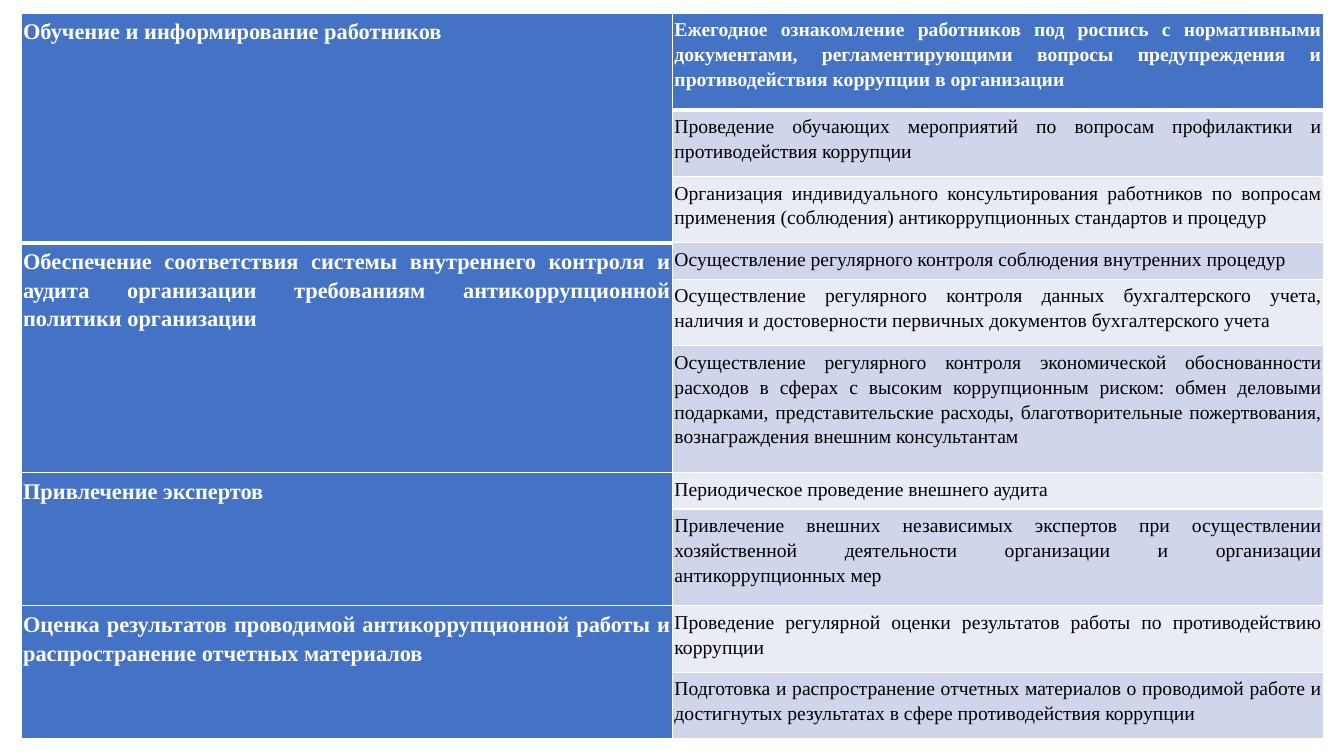
"""Build a slide with a table of anti-corruption measures by area."""
from lxml.etree import SubElement
from pptx import Presentation
from pptx.dml.color import RGBColor
from pptx.enum.text import PP_ALIGN as Align
from pptx.oxml.ns import qn
from pptx.util import Inches, Pt

GROUPS = [
    ("Обучение и информирование работников", [
        ("Ежегодное ознакомление работников под роспись с нормативными документами, "
         "регламентирующими вопросы предупреждения и противодействия коррупции в организации", 0.96),
        ("Проведение обучающих мероприятий по вопросам профилактики и "
         "противодействия коррупции", 0.66),
        ("Организация индивидуального консультирования работников по вопросам "
         "применения (соблюдения) антикоррупционных стандартов и процедур", 0.66),
    ]),
    ("Обеспечение соответствия системы внутреннего контроля и аудита организации "
     "требованиям антикоррупционной политики организации", [
        ("Осуществление регулярного контроля соблюдения внутренних процедур", 0.36),
        ("Осуществление регулярного контроля данных бухгалтерского учета, "
         "наличия и достоверности первичных документов бухгалтерского учета", 0.66),
        ("Осуществление регулярного контроля экономической обоснованности расходов в сферах "
         "с высоким коррупционным риском: обмен деловыми подарками, представительские расходы, "
         "благотворительные пожертвования, вознаграждения внешним консультантам", 1.26),
    ]),
    ("Привлечение экспертов", [
        ("Периодическое проведение внешнего аудита", 0.36),
        ("Привлечение внешних независимых экспертов при осуществлении хозяйственной "
         "деятельности организации и организации антикоррупционных мер", 0.96),
    ]),
    ("Оценка результатов проводимой антикоррупционной работы и "
     "распространение отчетных материалов", [
        ("Проведение регулярной оценки результатов работы по противодействию коррупции", 0.66),
        ("Подготовка и распространение отчетных материалов о проводимой работе и "
         "достигнутых результатах в сфере противодействия коррупции", 0.66),
    ]),
]
BLUE, WHITE, BLACK = "4472C4", "FFFFFF", "000000"
BANDS = ["E9EBF5", "CFD5EA"]
LEFT, TOP, WIDE = 0.21, 0.13, 6.46
PADS = {"margin_left": Inches(0.02), "margin_right": Inches(0.02),
        "margin_top": Inches(0.03), "margin_bottom": Inches(0.03)}


def color(code):
    return RGBColor.from_string(code)


def apply(item, form):
    for key, value in form.items():
        setattr(item, key, value)


def border(cell, base):
    props = cell._tc.get_or_add_tcPr()
    for side, width in {"L": 1, "R": 1, "T": 1, "B": base}.items():
        line = SubElement(props, qn(f"a:ln{side}"), w=str(Pt(width)))
        fill = SubElement(line, qn("a:solidFill"))
        SubElement(fill, qn("a:srgbClr"), val=WHITE)


def style(cell, back, base):
    border(cell, base)
    cell.fill.solid()
    cell.fill.fore_color.rgb = color(back)
    apply(cell, PADS)


def write(cell, text, size, ink, bold):
    para = cell.text_frame.paragraphs[0]
    apply(para, {"alignment": Align.JUSTIFY, "line_spacing": 1.15})
    run = para.add_run()
    run.text = text
    apply(run.font, {"name": "Times New Roman", "size": Pt(size), "bold": bold})
    run.font.color.rgb = color(ink)


def main():
    deck = Presentation()
    apply(deck, {"slide_width": Inches(13.33), "slide_height": Inches(7.5)})
    slide = deck.slides.add_slide(deck.slide_layouts[6])
    highs = [high for _, steps in GROUPS for _, high in steps]
    table = slide.shapes.add_table(
        len(highs), 2, Inches(LEFT), Inches(TOP),
        Inches(2 * WIDE), Inches(sum(highs))).table
    for col in table.columns:
        col.width = Inches(WIDE)
    for row, high in zip(table.rows, highs):
        row.height = Inches(high)

    row = 0
    for area, steps in GROUPS:
        first, last = row, row + len(steps) - 1
        for text, _ in steps:
            head = row == 0
            style(table.cell(row, 0), BLUE, 3 if first == 0 else 1)
            cell = table.cell(row, 1)
            style(cell, BLUE if head else BANDS[row % 2], 3 if head else 1)
            write(cell, text, 14, WHITE if head else BLACK, head)
            row += 1
        table.cell(first, 0).merge(table.cell(last, 0))
        write(table.cell(first, 0), area, 16, WHITE, True)
    deck.save("out.pptx")


if __name__ == "__main__":
    main()
